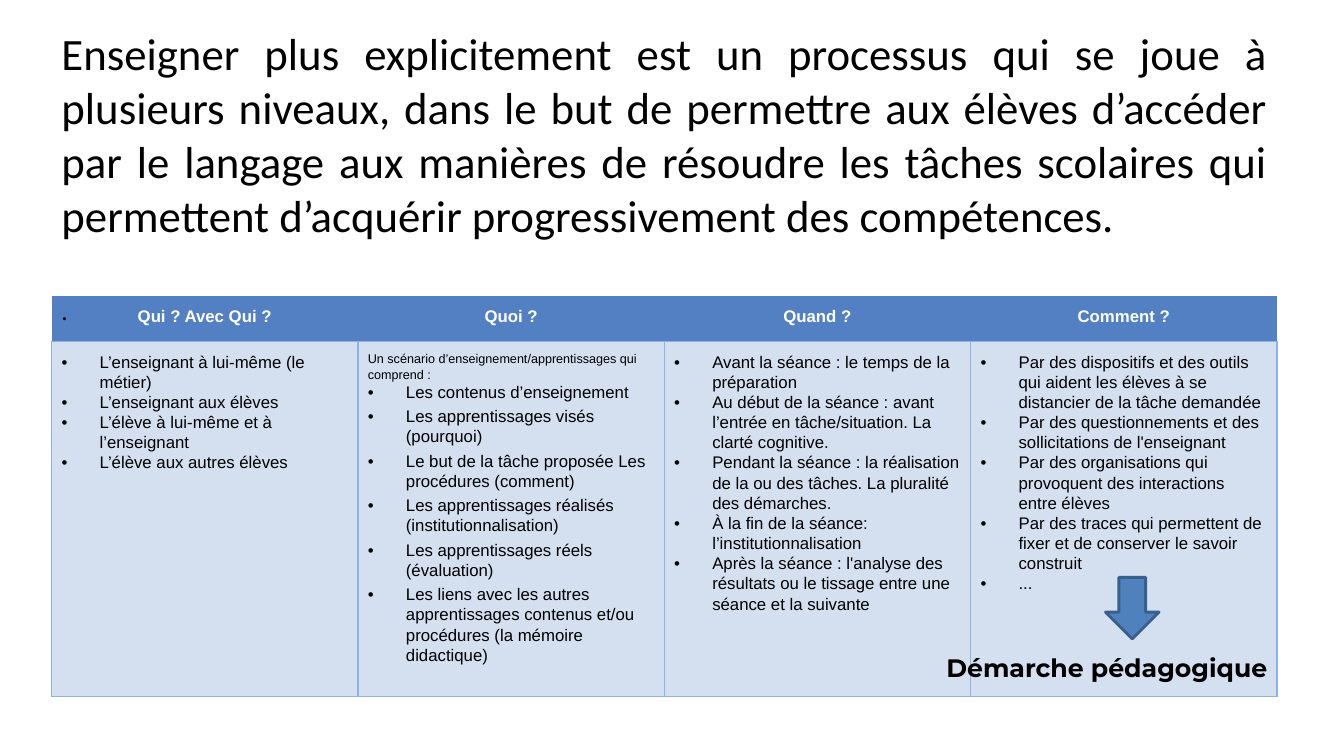
from dataclasses import dataclass

from lxml.etree import SubElement
from pptx import Presentation
from pptx.dml.color import RGBColor
from pptx.enum.shapes import MSO_SHAPE
from pptx.enum.text import MSO_ANCHOR, PP_ALIGN
from pptx.oxml import parse_xml
from pptx.oxml.ns import nsdecls, qn
from pptx.util import Cm, Pt


@dataclass(frozen=True)
class Theme:
    ink: str = "000000"
    white: str = "FFFFFF"
    header: str = "5280C2"
    body: str = "D4DFF0"
    border: str = "8FB2E6"
    arrow: str = "4F81BD"
    arrow_edge: str = "3A5F8C"
    statement_font: str = "Calibri"
    table_font: str = "Arial"
    approach_font: str = "Montserrat"
    statement_size: float = 32
    label_size: float = 18
    table_size: float = 12
    intro_size: float = 9
    table_leading: float = 14.4


STATEMENT = (
    "Enseigner plus explicitement est un processus qui se joue à plusieurs niveaux, "
    "dans le but de permettre aux élèves d’accéder par le langage aux manières de "
    "résoudre les tâches scolaires qui permettent d’acquérir progressivement des compétences."
)
SCENARIO_INTRO = "Un scénario d’enseignement/apprentissages qui comprend :"
# Heading, introductory line, bulleted items, space after each item
QUESTIONS = [
    ("Qui ? Avec Qui ?", "", [
        "L’enseignant à lui-même (le métier)",
        "L’enseignant aux élèves",
        "L’élève à lui-même et à l’enseignant",
        "L’élève aux autres élèves",
    ], 0),
    ("Quoi ?", SCENARIO_INTRO, [
        "Les contenus d’enseignement",
        "Les apprentissages visés (pourquoi)",
        "Le but de la tâche proposée Les procédures (comment)",
        "Les apprentissages réalisés  (institutionnalisation)",
        "Les apprentissages réels (évaluation)",
        "Les liens avec les autres apprentissages contenus et/ou procédures "
        "(la mémoire didactique)",
    ], 3),
    ("Quand ?", "", [
        "Avant la séance : le temps de la préparation",
        "Au début de la séance : avant l’entrée en tâche/situation. La clarté cognitive.",
        "Pendant la séance : la réalisation de la ou des tâches. La pluralité des démarches.",
        "À la fin de la séance: l’institutionnalisation",
        "Après la séance : l'analyse des résultats ou le tissage entre une séance "
        "et la suivante",
    ], 0),
    ("Comment ?", "", [
        "Par des dispositifs et des outils qui aident les élèves à se distancier "
        "de la tâche demandée",
        "Par des questionnements et des sollicitations de l'enseignant",
        "Par des organisations qui provoquent des interactions entre élèves",
        "Par des traces qui permettent de fixer et de conserver le savoir construit",
        "...",
    ], 0),
]


class SlideBuilder:
    def __init__(self, slide, theme):
        self.slide = slide
        self.theme = theme

    def add_text(self, paragraph, text, size, font, color=None, bold=False):
        run = paragraph.add_run()
        run.text = text
        run.font.size = Pt(size)
        run.font.name = font
        run.font.bold = bold
        run.font.color.rgb = RGBColor.from_string(color or self.theme.ink)

    def text_box(self, left, top, width, height):
        """Add a wrapping text box and return its text frame."""
        frame = self.slide.shapes.add_textbox(
            Cm(left), Cm(top), Cm(width), Cm(height)).text_frame
        frame.word_wrap = True
        return frame

    def bullet(self, paragraph):
        properties = paragraph._p.get_or_add_pPr()
        properties.set("marL", str(Cm(0.96)))
        properties.set("indent", str(-Cm(0.96)))
        SubElement(properties, qn("a:buFont"), typeface=self.theme.table_font)
        SubElement(properties, qn("a:buChar"), char="•")

    def style_cell(self, cell, fill, edges):
        """Fill a cell and draw a border on the named edges only."""
        cell.fill.solid()
        cell.fill.fore_color.rgb = RGBColor.from_string(fill)
        cell.vertical_anchor = MSO_ANCHOR.TOP
        cell.margin_left = cell.margin_right = Cm(0.25)
        cell.margin_top = cell.margin_bottom = Cm(0.25)
        visible = f'<a:solidFill><a:srgbClr val="{self.theme.border}"/></a:solidFill>'
        for position, edge in enumerate("LRTB"):
            paint = visible if edge in edges else "<a:noFill/>"
            cell._tc.get_or_add_tcPr().insert(position, parse_xml(
                f'<a:ln{edge} {nsdecls("a")} w="{Pt(1)}">{paint}</a:ln{edge}>'))

    def fill_header(self, cell, heading):
        self.style_cell(cell, self.theme.header, "B")
        paragraph = cell.text_frame.paragraphs[0]
        paragraph.alignment = PP_ALIGN.CENTER
        paragraph.line_spacing = 1.07
        self.add_text(paragraph, heading, self.theme.table_size, self.theme.table_font,
                      self.theme.white, bold=True)

    def fill_answers(self, cell, intro, items, space_after):
        theme = self.theme
        self.style_cell(cell, theme.body, "LRTB")
        frame = cell.text_frame
        paragraph = frame.paragraphs[0]
        if intro:
            paragraph.line_spacing = 1.07
            self.add_text(paragraph, intro, theme.intro_size, theme.table_font)
            paragraph = frame.add_paragraph()
        for index, item in enumerate(items):
            if index:
                paragraph = frame.add_paragraph()
            paragraph.line_spacing = Pt(theme.table_leading)
            paragraph.space_after = Pt(space_after)
            self.bullet(paragraph)
            self.add_text(paragraph, item, theme.table_size, theme.table_font)

    def question_table(self, left, top, column_width, row_heights, questions):
        table = self.slide.shapes.add_table(
            len(row_heights), len(questions), Cm(left), Cm(top),
            Cm(column_width * len(questions)), Cm(sum(row_heights))).table
        table.first_row = table.horz_banding = False
        for row, height in zip(table.rows, row_heights):
            row.height = Cm(height)
        for index, (heading, intro, items, space_after) in enumerate(questions):
            table.columns[index].width = Cm(column_width)
            self.fill_header(table.cell(0, index), heading)
            self.fill_answers(table.cell(1, index), intro, items, space_after)

    def statement(self, left, top, width, height, text):
        theme = self.theme
        frame = self.text_box(left, top, width, height)
        sentence = frame.paragraphs[0]
        sentence.alignment = PP_ALIGN.JUSTIFY
        self.add_text(sentence, text, theme.statement_size, theme.statement_font)
        full_stop = frame.add_paragraph()
        full_stop.space_before = Pt(39)
        self.add_text(full_stop, ".", theme.label_size, theme.statement_font)

    def approach_label(self, left, top, width, height, text):
        paragraph = self.text_box(left, top, width, height).paragraphs[0]
        self.add_text(paragraph, text, self.theme.label_size, self.theme.approach_font,
                      bold=True)

    def down_arrow(self, left, top, width, height):
        arrow = self.slide.shapes.add_shape(
            MSO_SHAPE.DOWN_ARROW, Cm(left), Cm(top), Cm(width), Cm(height))
        arrow.shadow.inherit = False
        arrow.fill.solid()
        arrow.fill.fore_color.rgb = RGBColor.from_string(self.theme.arrow)
        arrow.line.color.rgb = RGBColor.from_string(self.theme.arrow_edge)
        arrow.line.width = Pt(2)


def main():
    presentation = Presentation()
    presentation.slide_width = Cm(33.87)
    presentation.slide_height = Cm(19.05)
    slide = presentation.slides.add_slide(presentation.slide_layouts[6])
    builder = SlideBuilder(slide, Theme())
    builder.question_table(1.3, 7.47, 7.72, (1.14, 8.94), QUESTIONS)
    builder.statement(1.3, 0.53, 30.91, 7.87, STATEMENT)
    builder.approach_label(23.6, 16.31, 9.27, 1.02, "Démarche pédagogique")
    builder.down_arrow(27.86, 14.55, 1.35, 1.55)
    presentation.save("out.pptx")


if __name__ == "__main__":
    main()
